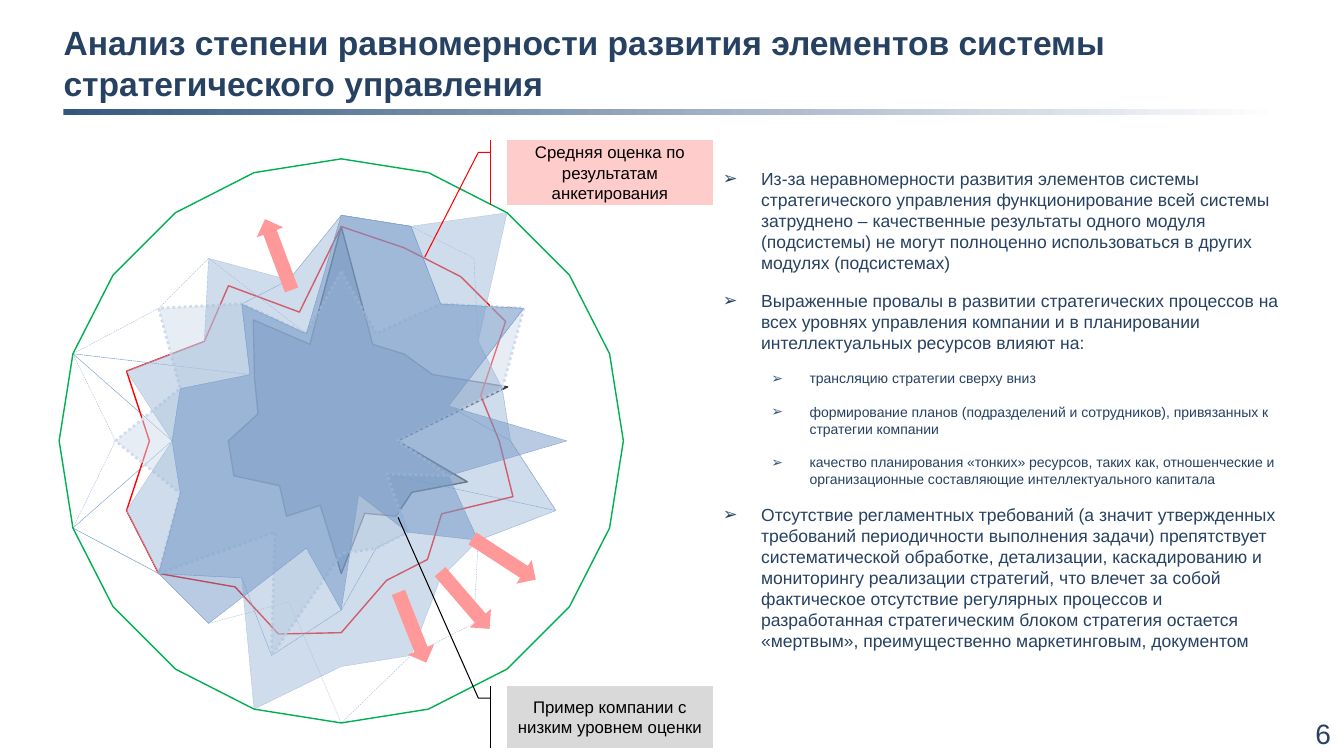
from lxml.etree import SubElement
from pptx import Presentation
from pptx.chart.data import CategoryChartData
from pptx.dml.color import RGBColor
from pptx.enum.chart import XL_CHART_TYPE as CHART, XL_TICK_LABEL_POSITION as LABELS, XL_TICK_MARK as TICK
from pptx.enum.dml import MSO_LINE as DASH
from pptx.enum.shapes import MSO_SHAPE as SHAPE
from pptx.enum.text import MSO_ANCHOR as ANCHOR, PP_ALIGN as ALIGN
from pptx.oxml.ns import qn
from pptx.util import Pt

SCALE = 9144
FONT = "Arial"
NAVY = "264161"
BLUE = "345782"

RADAR_SERIES = [
    ([100] * 20, None, "00B050", 1, None),
    ([80, 80, 60, 80, 40, 80, 40, 60, 40, 20, 60, 40, 80, 80, 60, 60, 60, 40, 60, 40],
     "7298C6", "7298C6", 0.25, DASH.ROUND_DOT),
    ([80, 80, 100, 60, 60, 60, 80, 60, 60, 80, 80, 100, 60, 80, 80, 60, 80, 60, 80, 60],
     "A1BAD9", "A1BAD9", 0.25, DASH.ROUND_DOT),
    ([60, 40, 60, 80, 60, 20, 40, 20, 40, 40, 40, 80, 40, 80, 60, 80, 60, 80, 60, 40],
     "D0DCEC", "D0DCEC", 2, DASH.ROUND_DOT),
    ([80, 80, 80, 60, 60, 60, 80, 60, 80, 80, 100, 60, 80, 80, 100, 80, 100, 80, 80, 40],
     None, "93B1D5", 0.25, DASH.DASH),
    ([80, 80, 60, 80, 40, 60, 80, 20, 40, 40, 60, 80, 60, 80, 100, 60, 100, 40, 60, 60],
     None, "5D8AC0", 0.25, DASH.SQUARE_DOT),
    ([76, 72, 72, 72, 52, 56, 64, 44, 52, 52, 68, 72, 64, 80, 80, 68, 80, 60, 68, 48],
     None, "FF0000", 1, None),
    ([76, 36, 38, 40, 62, 20, 47, 31, 33, 27, 47, 24, 33, 27, 40, 40, 31, 38, 53, 36],
     "365A85", "363636", 1, None),
]

CONCLUSIONS = [
    (0, "Из-за неравномерности развития элементов системы стратегического управления "
        "функционирование всей системы затруднено – качественные результаты одного модуля "
        "(подсистемы) не могут полноценно использоваться в других модулях (подсистемах)"),
    (0, "Выраженные провалы в развитии стратегических процессов на всех уровнях управления "
        "компании и в планировании интеллектуальных ресурсов влияют на:"),
    (1, "трансляцию стратегии сверху вниз"),
    (1, "формирование планов (подразделений и сотрудников), привязанных к стратегии компании"),
    (1, "качество планирования «тонких» ресурсов, таких как, отношенческие и "
        "организационные составляющие интеллектуального капитала"),
    (0, "Отсутствие регламентных требований (а значит утвержденных требований периодичности "
        "выполнения задачи) препятствует систематической обработке, детализации, каскадированию "
        "и мониторингу реализации стратегий, что влечет за собой фактическое отсутствие "
        "регулярных процессов и разработанная стратегическим блоком стратегия остается "
        "«мертвым», преимущественно маркетинговым, документом"),
]

ARROWS = [(262, 215, 159.5), (395, 585, 338.4), (447, 558, 319.2), (486, 517, 303)]


def px(*lengths):
    return [length * SCALE for length in lengths]


def color(value):
    return RGBColor.from_string(value)


def set_frame(frame, anchor, side=0, vertical=0, wrap=True):
    frame.word_wrap = wrap
    frame.vertical_anchor = anchor
    frame.margin_left = frame.margin_right = side * SCALE
    frame.margin_top = frame.margin_bottom = vertical * SCALE


def add_run(paragraph, text, size, ink, bold=False):
    run = paragraph.add_run()
    run.text = text
    run.font.name = FONT
    run.font.size = Pt(size)
    run.font.bold = bold
    run.font.color.rgb = color(ink)


def add_text(slide, box, text, size, ink, anchor, align=ALIGN.LEFT, bold=False, vertical=0, wrap=True):
    frame = slide.shapes.add_textbox(*px(*box)).text_frame
    set_frame(frame, anchor, 0, vertical, wrap)
    frame.paragraphs[0].alignment = align
    add_run(frame.paragraphs[0], text, size, ink, bold)


def add_shape(slide, kind, box):
    shape = slide.shapes.add_shape(kind, *px(*box))
    shape.shadow.inherit = False
    shape.line.fill.background()
    return shape


def add_rule(slide, box):
    rule = add_shape(slide, SHAPE.RECTANGLE, box)
    rule.fill.gradient()
    rule.fill.gradient_angle = 0
    for stop, position, ink in zip(rule.fill.gradient_stops, (0, 1), (BLUE, "FFFFFF")):
        stop.position = position
        stop.color.rgb = color(ink)


def add_arrow(slide, left, top, rotation):
    arrow = add_shape(slide, SHAPE.DOWN_ARROW, (left, top, 28, 75))
    arrow.rotation = rotation
    arrow.fill.solid()
    arrow.fill.fore_color.rgb = color("FF9999")


def add_callout(slide, box, text, fill, line, leader):
    callout = add_shape(slide, SHAPE.LINE_CALLOUT_2_ACCENT_BAR, box)
    callout.fill.solid()
    callout.fill.fore_color.rgb = color(fill)
    callout.line.color.rgb = color(line)
    callout.line.width = Pt(0)
    for index, value in enumerate((0.19, -0.08, 0.19, -0.14, *leader)):
        callout.adjustments[index] = value
    set_frame(callout.text_frame, ANCHOR.MIDDLE, 5, 5)
    paragraph = callout.text_frame.paragraphs[0]
    paragraph.alignment = ALIGN.CENTER
    add_run(paragraph, text, 12, "000000")


def add_bullet(paragraph, level, text):
    paragraph.level = level
    paragraph.space_before = Pt(12)
    properties = paragraph._p.get_or_add_pPr()
    properties.set("marL", str((38, 86)[level] * SCALE))
    properties.set("indent", str(-38 * SCALE))
    bullet_color = SubElement(properties, qn("a:buClr"))
    SubElement(bullet_color, qn("a:srgbClr"), val=(NAVY, BLUE)[level])
    SubElement(properties, qn("a:buFont"), typeface=FONT)
    SubElement(properties, qn("a:buChar"), char="➢")
    add_run(paragraph, text, (12.5, 10)[level], NAVY)


def add_conclusions(slide, box):
    frame = slide.shapes.add_textbox(*px(*box)).text_frame
    set_frame(frame, ANCHOR.TOP)
    for index, (level, text) in enumerate(CONCLUSIONS):
        paragraph = frame.add_paragraph() if index else frame.paragraphs[0]
        add_bullet(paragraph, level, text)


def set_plot_layout(chart, **fractions):
    plot_area = chart._chartSpace.chart.plotArea
    layout = plot_area.find(qn("c:layout"))
    if layout is None:
        layout = SubElement(plot_area, qn("c:layout"))
        plot_area.insert(0, layout)
    manual = SubElement(layout, qn("c:manualLayout"))
    settings = {"layoutTarget": "inner", "xMode": "edge", "yMode": "edge", **fractions}
    for name, value in settings.items():
        SubElement(manual, qn(f"c:{name}"), val=str(value))


def style_series(series, fill, line, width, dash):
    if fill:
        series.format.fill.solid()
        series.format.fill.fore_color.rgb = color(fill)
        for tint in series.format.fill._xPr.iter(qn("a:srgbClr")):
            SubElement(tint, qn("a:alpha"), val="50000")
    else:
        series.format.fill.background()
    series.format.line.color.rgb = color(line)
    series.format.line.width = Pt(width)
    if dash:
        series.format.line.dash_style = dash


def add_radar(slide, box):
    data = CategoryChartData()
    data.categories = [str(number) for number in range(1, 21)]
    for number, (values, *_) in enumerate(RADAR_SERIES, 1):
        data.add_series(f"Series {number}", values)
    chart = slide.shapes.add_chart(CHART.RADAR_FILLED, *px(*box), data).chart
    chart.has_legend = False
    chart.has_title = False
    chart.font.name = FONT
    chart.font.size = Pt(10)
    chart.font.color.rgb = color("000000")
    chart.plots[0].vary_by_categories = False
    chart.category_axis.visible = False
    chart.category_axis.has_major_gridlines = False
    axis = chart.value_axis
    axis.minimum_scale, axis.maximum_scale, axis.major_unit = 0, 100, 100
    axis.tick_label_position = LABELS.NONE
    axis.major_tick_mark = axis.minor_tick_mark = TICK.NONE
    axis.format.line.fill.background()
    axis.has_major_gridlines = True
    axis.major_gridlines.format.line.color.rgb = color("C7D6E8")
    axis.major_gridlines.format.line.width = Pt(0.25)
    for series, (_, *style) in zip(chart.plots[0].series, RADAR_SERIES):
        style_series(series, *style)
    set_plot_layout(chart, x=0.08, y=0.02, w=0.84, h=0.96)


def main():
    presentation = Presentation()
    presentation.slide_width, presentation.slide_height = px(1333, 750)
    slide = presentation.slides.add_slide(presentation.slide_layouts[6])
    add_text(slide, (1286, 711, 34, 33), "6", 20, "274161", ANCHOR.TOP, ALIGN.RIGHT, wrap=False)
    add_rule(slide, (63, 108, 1206, 6))
    add_text(slide, (63, 20, 1239, 87),
             "Анализ степени равномерности развития элементов системы стратегического управления",
             24, NAVY, ANCHOR.BOTTOM, bold=True, vertical=5)
    add_radar(slide, (0, 146, 677, 583))
    add_conclusions(slide, (717, 167, 554, 533))
    for arrow in ARROWS:
        add_arrow(slide, *arrow)
    add_callout(slide, (503, 139, 204, 64), "Средняя оценка по результатам анкетирования",
                "FFCCCC", "FF0000", (1.81, -0.4))
    add_callout(slide, (503, 681, 204, 61), "Пример компании с низким уровнем оценки",
                "D9D9D9", "000000", (-2.75, -0.53))
    presentation.save("out.pptx")


if __name__ == "__main__":
    main()
